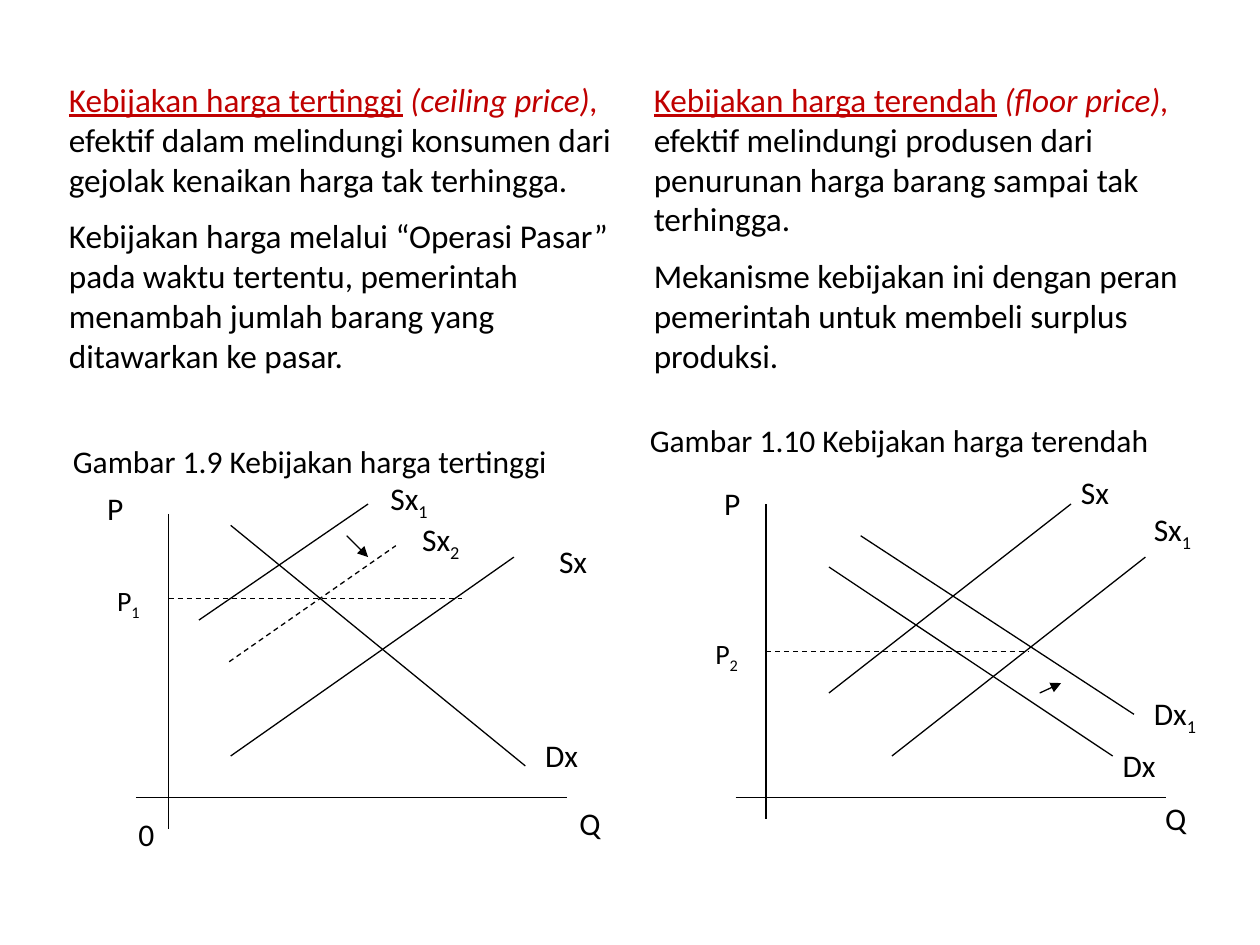
from typing import NamedTuple

from lxml.etree import SubElement
from pptx import Presentation
from pptx.dml.color import RGBColor
from pptx.enum.dml import MSO_LINE
from pptx.enum.shapes import MSO_CONNECTOR
from pptx.enum.text import MSO_AUTO_SIZE
from pptx.oxml.ns import qn
from pptx.util import Cm, Pt

BLACK = RGBColor(0x00, 0x00, 0x00)
RED = RGBColor(0xC0, 0x00, 0x00)
FONT = "Calibri"


class Policy(NamedTuple):
    left: float
    width: float
    name: str
    term: str
    effect: str
    mechanism: str


class Line(NamedTuple):
    x1: float
    y1: float
    x2: float
    y2: float
    dashed: bool = False
    arrow: bool = False


class Label(NamedTuple):
    left: float
    top: float
    width: float
    text: str
    subscript: str = ""
    size: int = 18


POLICIES = [
    Policy(1.14, 11.66, "Kebijakan harga tertinggi", "(ceiling price), ",
           "efektif dalam melindungi konsumen dari gejolak kenaikan harga tak terhingga.",
           "Kebijakan harga melalui “Operasi Pasar” pada waktu tertentu, pemerintah "
           "menambah jumlah barang yang ditawarkan ke pasar."),
    Policy(12.93, 12.07, "Kebijakan harga terendah", "(floor price), ",
           "efektif melindungi produsen dari penurunan harga barang sampai tak terhingga.",
           "Mekanisme kebijakan ini dengan peran pemerintah untuk membeli surplus produksi."),
]

CEILING_LINES = [
    Line(3.4, 10.36, 3.4, 16.71),
    Line(2.74, 16.08, 11.43, 16.08),
    Line(4.65, 15.24, 10.36, 11.23),
    Line(4.65, 10.59, 10.59, 15.44),
    Line(4.01, 12.5, 7.42, 10.16),
    Line(4.62, 13.34, 7.98, 11, dashed=True),
    Line(3.4, 12.07, 9.32, 12.07, dashed=True),
    Line(6.99, 10.8, 7.42, 11.23, arrow=True),
]
CEILING_LABELS = [
    Label(1.22, 8.79, 11.68, "Gambar 1.9 Kebijakan harga tertinggi"),
    Label(1.91, 9.73, 0.97, "P"),
    Label(11.43, 16.08, 1.04, "Q"),
    Label(2.54, 16.31, 0.89, "0"),
    Label(2.11, 11.63, 1.09, "P", "1", 16),
    Label(11.02, 10.8, 1.3, "Sx"),
    Label(8.26, 10.36, 1.55, "Sx", "2"),
    Label(7.62, 9.53, 1.55, "Sx", "1"),
    Label(10.74, 14.71, 1.32, "Dx"),
]
FLOOR_LINES = [
    Line(15.44, 10.16, 15.44, 16.51),
    Line(14.83, 16.08, 23.5, 16.08),
    Line(16.71, 13.97, 21.59, 10.16),
    Line(17.98, 15.24, 23.09, 11.23),
    Line(16.71, 11.43, 22.43, 15.24),
    Line(17.35, 10.8, 22.86, 14.4),
    Line(15.44, 13.13, 20.75, 13.13, dashed=True),
    Line(20.96, 13.97, 21.39, 13.77, arrow=True),
]
FLOOR_LABELS = [
    Label(12.85, 8.36, 12.32, "Gambar 1.10 Kebijakan harga terendah"),
    Label(14.35, 9.63, 0.97, "P"),
    Label(23.24, 15.98, 1.04, "Q"),
    Label(14.17, 12.7, 1.09, "P", "2", 16),
    Label(21.54, 9.42, 1.3, "Sx"),
    Label(22.38, 14.91, 1.32, "Dx"),
    Label(23.01, 10.16, 1.55, "Sx", "1"),
    Label(23.01, 13.87, 1.55, "Dx", "1"),
]


def format_paragraph(para, size: int) -> None:
    para.font.name = FONT
    para.font.size = Pt(size)
    para.font.color.rgb = BLACK


def add_span(para, text: str):
    span = para.add_run()
    span.text = text
    return span


def space_before_half_line(para) -> None:
    spacing = SubElement(para._p.get_or_add_pPr(), qn("a:spcBef"))
    SubElement(spacing, qn("a:spcPct")).set("val", "50000")


def add_policy(page, policy: Policy) -> None:
    box = page.shapes.add_textbox(Cm(policy.left), Cm(1.47), Cm(policy.width), Cm(6.35))
    frame = box.text_frame
    frame.word_wrap = True
    frame.auto_size = MSO_AUTO_SIZE.SHAPE_TO_FIT_TEXT
    heading, body = frame.paragraphs[0], frame.add_paragraph()
    for para in (heading, body):
        space_before_half_line(para)
        format_paragraph(para, 19)
    name, gap, term = [add_span(heading, text) for text in (policy.name, " ", policy.term)]
    for span in (name, gap, term):
        span.font.color.rgb = RED
    name.font.underline = True
    term.font.italic = True
    add_span(heading, policy.effect)
    add_span(body, policy.mechanism)


def add_line(page, line: Line) -> None:
    connector = page.shapes.add_connector(
        MSO_CONNECTOR.STRAIGHT, Cm(line.x1), Cm(line.y1), Cm(line.x2), Cm(line.y2))
    connector.line.color.rgb = BLACK
    connector.line.width = Pt(0.75)
    if line.dashed:
        connector.line.dash_style = MSO_LINE.DASH
    if line.arrow:
        SubElement(connector.line._get_or_add_ln(), qn("a:tailEnd")).set("type", "triangle")
    SubElement(connector._element.spPr, qn("a:effectLst"))


def add_label(page, label: Label) -> None:
    height = 1.07 if label.size == 18 else 0.94
    box = page.shapes.add_textbox(
        Cm(label.left), Cm(label.top), Cm(label.width), Cm(height))
    frame = box.text_frame
    frame.word_wrap = False
    frame.auto_size = MSO_AUTO_SIZE.SHAPE_TO_FIT_TEXT
    para = frame.paragraphs[0]
    format_paragraph(para, label.size)
    add_span(para, label.text)
    if label.subscript:
        span = add_span(para, label.subscript)
        span._r.get_or_add_rPr().set("baseline", "-25000")


def main() -> None:
    deck = Presentation()
    deck.slide_width, deck.slide_height = Cm(25.4), Cm(19.05)
    page = deck.slides.add_slide(deck.slide_layouts[6])
    for policy in POLICIES:
        add_policy(page, policy)
    for line in CEILING_LINES + FLOOR_LINES:
        add_line(page, line)
    for label in CEILING_LABELS + FLOOR_LABELS:
        add_label(page, label)
    deck.save("out.pptx")


if __name__ == "__main__":
    main()
